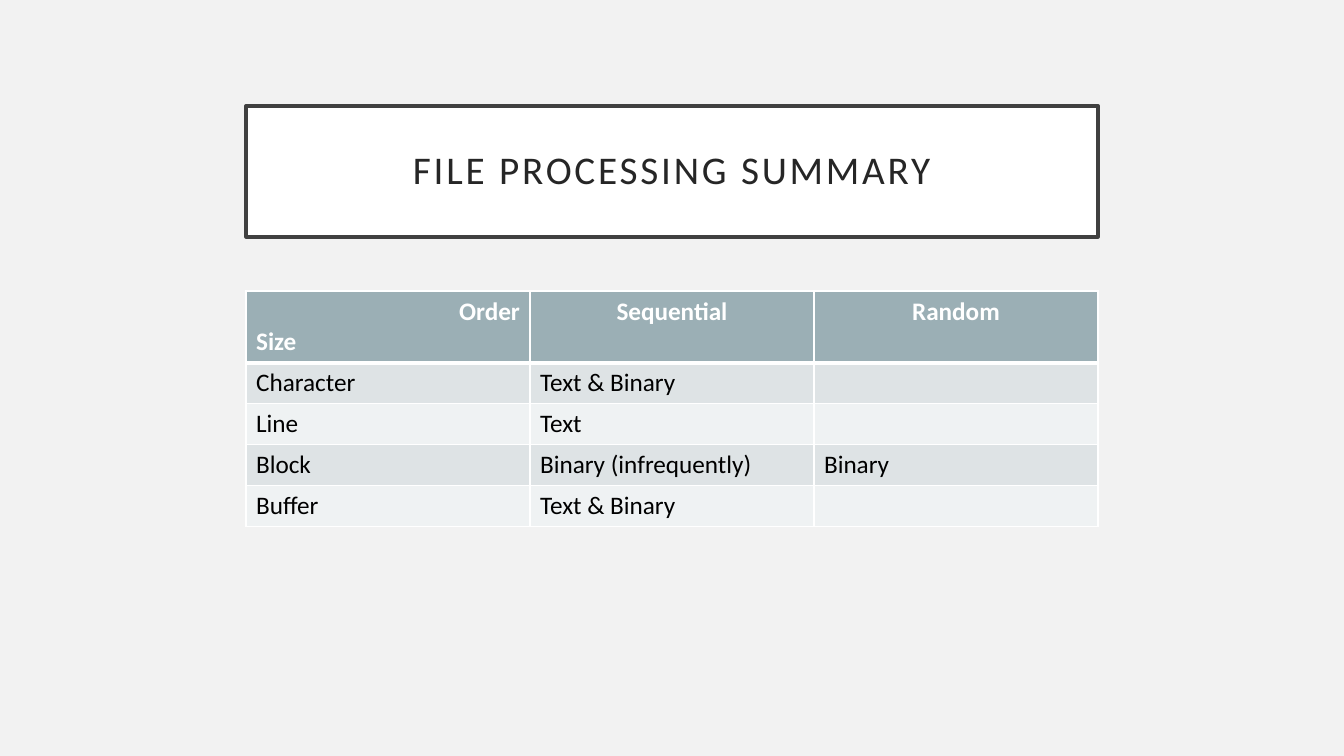
from dataclasses import dataclass

from lxml import etree
from pptx import Presentation
from pptx.dml.color import RGBColor
from pptx.enum.text import MSO_ANCHOR, MSO_AUTO_SIZE, PP_ALIGN
from pptx.oxml.ns import qn
from pptx.util import Inches, Pt

LEFT, CENTER, RIGHT = PP_ALIGN.LEFT, PP_ALIGN.CENTER, PP_ALIGN.RIGHT
MIDDLE = MSO_ANCHOR.MIDDLE
NO_AUTOFIT = MSO_AUTO_SIZE.NONE
TITLE_ONLY = 5


@dataclass(frozen=True)
class Theme:
    font: str = "Calibri"
    title_size: int = 28
    table_size: int = 18
    background: str = "F2F2F2"
    white: str = "FFFFFF"
    frame: str = "404040"
    title_text: str = "262626"
    header: str = "9BAFB5"
    bands: tuple = ("DEE3E5", "EFF2F3")
    body_text: str = "000000"


THEME = Theme()
SLIDE_WIDTH, SLIDE_HEIGHT = Inches(13.33), Inches(7.5)
CONTENT_WIDTH = Inches(8.45)
CONTENT_LEFT = (SLIDE_WIDTH - CONTENT_WIDTH) // 2
HEADER_HEIGHT, ROW_HEIGHT = Inches(0.71), Inches(0.405)

HEADINGS = [
    [("Order", RIGHT), ("Size", LEFT)],
    [("Sequential", CENTER)],
    [("Random", CENTER)],
]
ROWS = [
    ("Character", "Text & Binary", ""),
    ("Line", "Text", ""),
    ("Block", "Binary (infrequently)", "Binary"),
    ("Buffer", "Text & Binary", ""),
]


def paint(fill, color):
    fill.solid()
    fill.fore_color.rgb = RGBColor.from_string(color)


def style_font(font, size, color, bold=False):
    font.name = THEME.font
    font.size = Pt(size)
    font.bold = bold
    font.color.rgb = RGBColor.from_string(color)


def add_title(page, text):
    box = page.shapes.title
    box.left, box.top = CONTENT_LEFT, int(SLIDE_HEIGHT * 0.14)
    box.width, box.height = CONTENT_WIDTH, Inches(1.3)
    paint(box.fill, THEME.white)
    box.line.color.rgb = RGBColor.from_string(THEME.frame)
    box.line.width = Pt(2.5)
    frame = box.text_frame
    frame.auto_size = NO_AUTOFIT
    frame.word_wrap = True
    frame.vertical_anchor = MIDDLE
    frame.margin_left = frame.margin_right = Inches(0.2)
    frame.margin_top = frame.margin_bottom = Inches(0.2)
    frame.text = text
    para = frame.paragraphs[0]
    para.alignment = CENTER
    para.line_spacing = 0.9
    style_font(para.font, THEME.title_size, THEME.title_text)
    para.runs[0].font._element.set("spc", "200")


def set_borders(cell, top, bottom):
    properties = cell._tc.get_or_add_tcPr()
    sides = (("lnL", 1), ("lnR", 1), ("lnT", top), ("lnB", bottom))
    for position, (side, width) in enumerate(sides):
        line = etree.Element(qn(f"a:{side}"), w=str(Pt(width)))
        solid = etree.SubElement(line, qn("a:solidFill"))
        etree.SubElement(solid, qn("a:srgbClr"), val=THEME.white)
        properties.insert(position, line)


def fill_cell(cell, lines, fill, color, bold=False, top=1, bottom=1):
    paint(cell.fill, fill)
    set_borders(cell, top, bottom)
    frame = cell.text_frame
    frame.text = "\n".join(text for text, _ in lines)
    for para, (_, alignment) in zip(frame.paragraphs, lines):
        para.alignment = alignment
        style_font(para.font, THEME.table_size, color, bold)


def add_summary_table(page, headings, rows):
    table = page.shapes.add_table(
        len(rows) + 1, len(headings),
        CONTENT_LEFT, int(SLIDE_HEIGHT * 0.385),
        CONTENT_WIDTH, HEADER_HEIGHT + len(rows) * ROW_HEIGHT,
    ).table
    table.rows[0].height = HEADER_HEIGHT
    for column, lines in enumerate(headings):
        fill_cell(table.cell(0, column), lines, THEME.header, THEME.white,
                  bold=True, bottom=3)
    for number, values in enumerate(rows, start=1):
        table.rows[number].height = ROW_HEIGHT
        band = THEME.bands[(number - 1) % len(THEME.bands)]
        for column, text in enumerate(values):
            fill_cell(table.cell(number, column), [(text, LEFT)], band,
                      THEME.body_text, top=3 if number == 1 else 1)


def main():
    deck = Presentation()
    deck.slide_width, deck.slide_height = SLIDE_WIDTH, SLIDE_HEIGHT
    page = deck.slides.add_slide(deck.slide_layouts[TITLE_ONLY])
    paint(page.background.fill, THEME.background)
    add_title(page, "FILE PROCESSING SUMMARY")
    add_summary_table(page, HEADINGS, ROWS)
    deck.save("out.pptx")


if __name__ == "__main__":
    main()
